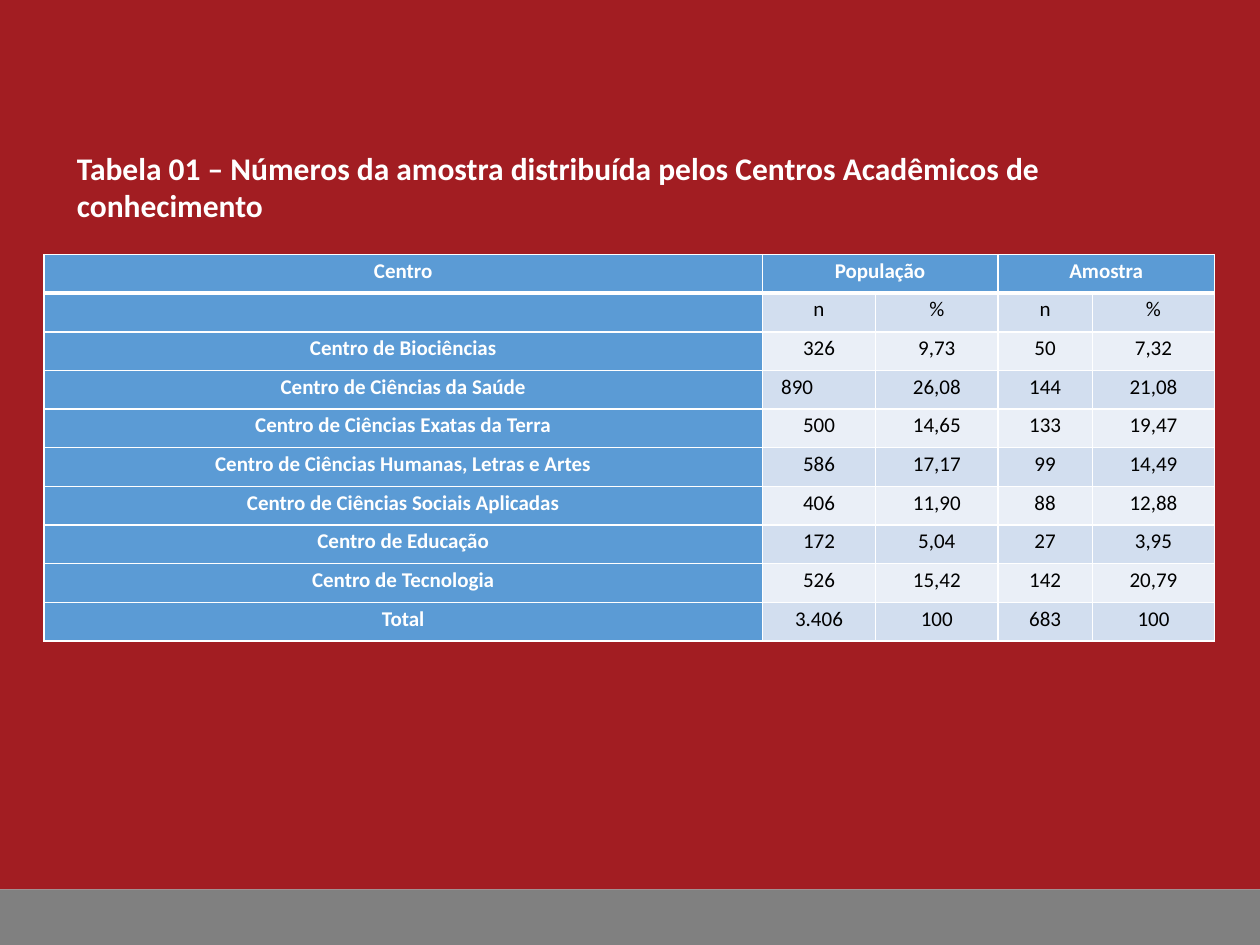
from lxml.etree import SubElement
from pptx import Presentation
from pptx.dml.color import RGBColor
from pptx.enum.shapes import MSO_SHAPE
from pptx.enum.text import MSO_ANCHOR, MSO_AUTO_SIZE, PP_ALIGN
from pptx.oxml import parse_xml
from pptx.oxml.ns import nsdecls
from pptx.util import Inches, Pt

FONT = "Calibri"
WHITE = RGBColor(0xFF, 0xFF, 0xFF)
BLACK = RGBColor(0x00, 0x00, 0x00)
RED = RGBColor(0xA2, 0x1D, 0x22)
GRAY = RGBColor(0x80, 0x80, 0x80)
BLUE = RGBColor(0x5B, 0x9B, 0xD5)
BAND_FILLS = (RGBColor(0xEA, 0xEF, 0xF7), RGBColor(0xD2, 0xDE, 0xEF))

TITLE = ("Tabela 01 – Números da amostra distribuída pelos "
         "Centros Acadêmicos de conhecimento")
COLUMN_WIDTHS = (5.7, 0.9, 0.97, 0.75, 0.97)
SAMPLE_ROWS = (
    ("Centro", "População", "", "Amostra", ""),
    ("", "n", "%", "n", "%"),
    ("Centro de Biociências", "326", "9,73", "50", "7,32"),
    ("Centro de Ciências da Saúde", "890", "26,08", "144", "21,08"),
    ("Centro de Ciências Exatas da Terra", "500", "14,65", "133", "19,47"),
    ("Centro de Ciências Humanas, Letras e Artes", "586", "17,17", "99", "14,49"),
    ("Centro de Ciências Sociais Aplicadas", "406", "11,90", "88", "12,88"),
    ("Centro de Educação", "172", "5,04", "27", "3,95"),
    ("Centro de Tecnologia", "526", "15,42", "142", "20,79"),
    ("Total", "3.406", "100", "683", "100"),
)


def style_font(font, size, color, bold):
    font.name = FONT
    font.size = Pt(size)
    font.color.rgb = color
    font.bold = bold


def add_band(slide, left, top, width, height, color):
    band = slide.shapes.add_shape(MSO_SHAPE.RECTANGLE, left, top, width, height)
    band.shadow.inherit = False
    band.fill.solid()
    band.fill.fore_color.rgb = color
    band.line.fill.background()


def place_title(slide, left, top, width, height):
    title = slide.shapes.title
    title.left, title.top, title.width, title.height = left, top, width, height
    frame = title.text_frame
    frame.text = TITLE
    frame.word_wrap = True
    frame.auto_size = MSO_AUTO_SIZE.NONE
    frame.vertical_anchor = MSO_ANCHOR.TOP
    paragraph = frame.paragraphs[0]
    paragraph.alignment = PP_ALIGN.LEFT
    style_font(paragraph.font, 18, WHITE, True)


def set_borders(cell, top_width, bottom_width):
    """Draw white borders, which must come before the fill in the cell XML."""
    properties = cell._tc.get_or_add_tcPr()
    widths = {"lnL": 1, "lnR": 1, "lnT": top_width, "lnB": bottom_width}
    for position, (side, width) in enumerate(widths.items()):
        border = parse_xml(f'<a:{side} {nsdecls("a")} w="{Pt(width)}"/>')
        namespace = border.nsmap["a"]
        fill = SubElement(border, f"{{{namespace}}}solidFill")
        SubElement(fill, f"{{{namespace}}}srgbClr", val=str(WHITE))
        properties.insert(position, border)


def format_cell(cell, text, is_heading, band_fill):
    cell.margin_left = cell.margin_right = Inches(0.07)
    cell.margin_top = cell.margin_bottom = 0
    cell.fill.solid()
    cell.fill.fore_color.rgb = BLUE if is_heading else band_fill
    cell.text = text
    paragraph = cell.text_frame.paragraphs[0]
    paragraph.alignment = PP_ALIGN.CENTER
    paragraph.line_spacing = 1.15
    style_font(paragraph.font, 12, WHITE if is_heading else BLACK, is_heading)


def add_sample_table(slide, left, top, width, height):
    table = slide.shapes.add_table(
        len(SAMPLE_ROWS), len(COLUMN_WIDTHS), left, top, width, height).table
    for column, column_width in zip(table.columns, COLUMN_WIDTHS):
        column.width = Inches(column_width)

    for r, row in enumerate(SAMPLE_ROWS):
        for c, text in enumerate(row):
            cell = table.cell(r, c)
            format_cell(cell, text, r == 0 or c == 0, BAND_FILLS[r % 2])
            set_borders(cell, 3 if r == 1 else 1, 3 if r == 0 else 1)

    for first in (1, 3):
        table.cell(0, first).merge(table.cell(0, first + 1))

    health_population = table.cell(3, 1)
    health_population.margin_left = Inches(0.15)
    health_population.text_frame.paragraphs[0].alignment = PP_ALIGN.LEFT


def main():
    deck = Presentation()
    deck.slide_width, deck.slide_height = Inches(10), Inches(7.5)
    slide = deck.slides.add_slide(deck.slide_layouts[5])
    slide.background.fill.solid()
    slide.background.fill.fore_color.rgb = WHITE
    add_band(slide, 0, 0, Inches(10), Inches(7.06), RED)
    add_band(slide, 0, Inches(7.06), Inches(10), Inches(0.44), GRAY)
    add_sample_table(slide, Inches(0.35), Inches(2.02), Inches(9.29), Inches(3.07))
    place_title(slide, Inches(0.51), Inches(1.13), Inches(9.29), Inches(0.94))
    # The title placeholder comes first by default; bring it in front of the bands.
    slide.shapes._spTree.append(slide.shapes.title._element)
    deck.save("out.pptx")


if __name__ == "__main__":
    main()
